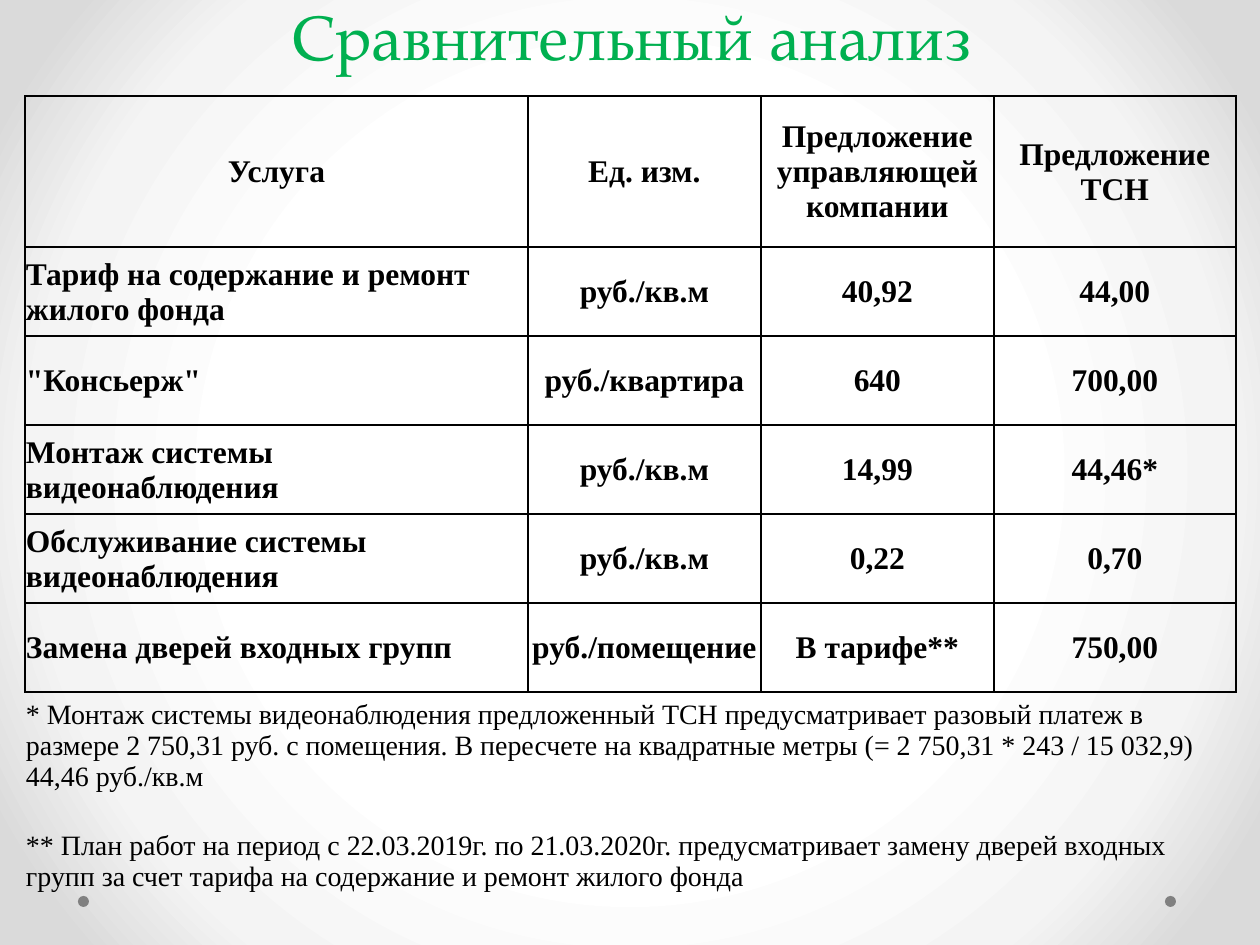
from lxml import etree
from pptx import Presentation, util as u
from pptx.dml.color import RGBColor
from pptx.enum import shapes, text
from pptx.oxml import parse_xml
from pptx.oxml.ns import nsdecls, qn

SCALE = 914400 / 126  # EMU in one px
MIDDLE, BOTTOM = text.MSO_ANCHOR.MIDDLE, text.MSO_ANCHOR.BOTTOM
LEFT, CENTER = text.PP_ALIGN.LEFT, text.PP_ALIGN.CENTER
EDGES = ("L", "R", "T", "B")

COLUMNS = [503, 233, 233, 242]
ROWS = [151] + [89] * 5 + [101, 136]
OFFERS = [
    ("Услуга", "Ед. изм.", "Предложение управляющей компании", "Предложение ТСН"),
    ("Тариф на содержание и ремонт жилого фонда", "руб./кв.м", "40,92", "44,00"),
    ('"Консьерж"', "руб./квартира", "640", "700,00"),
    ("Монтаж системы видеонаблюдения", "руб./кв.м", "14,99", "44,46*"),
    ("Обслуживание системы видеонаблюдения", "руб./кв.м", "0,22", "0,70"),
    ("Замена дверей входных групп", "руб./помещение", "В тарифе**", "750,00"),
]
NOTES = [
    ("* Монтаж системы видеонаблюдения предложенный ТСН предусматривает разовый "
     "платеж в размере 2 750,31 руб. с помещения. В пересчете на квадратные метры "
     "(= 2 750,31 * 243 / 15 032,9) 44,46 руб./кв.м", BOTTOM, "T"),
    ("** План работ на период с 22.03.2019г. по 21.03.2020г. предусматривает замену "
     "дверей входных групп за счет тарифа на содержание и ремонт жилого фонда", MIDDLE, ""),
]


def px(length):
    return u.Emu(round(length * SCALE))


def color(value):
    return RGBColor.from_string(value)


class Board:
    title = {"name": "TeX Gyre Pagella", "size": u.Pt(36), "bold": False, "ink": "00B050"}
    body = {"name": "Times New Roman", "size": u.Pt(18), "bold": True, "ink": "000000"}
    note = {**body, "size": u.Pt(16), "bold": False}

    def __init__(self, deck):
        self.page = deck.slides.add_slide(deck.slide_layouts[6])

    def backdrop(self, stops):
        """Fill the page with a round gradient, from the centre outwards."""
        self.page.background.fill.solid()
        solid = next(self.page.element.iter(qn("a:solidFill")))
        marks = "".join(f'<a:gs pos="{at * 1000}"><a:srgbClr val="{ink}"/></a:gs>'
                        for at, ink in stops)
        solid.getparent().replace(solid, parse_xml(
            f'<a:gradFill {nsdecls("a")} rotWithShape="1"><a:gsLst>{marks}</a:gsLst>'
            '<a:path path="circle"><a:fillToRect l="50000" t="50000" r="50000" b="50000"/>'
            "</a:path></a:gradFill>"))

    def dot(self, left, top, size, ink):
        shape = self.page.shapes.add_shape(
            shapes.MSO_SHAPE.OVAL, px(left), px(top), px(size), px(size))
        shape.shadow.inherit = False
        shape.fill.solid()
        shape.fill.fore_color.rgb = color(ink)
        shape.line.fill.background()

    def table(self, left, top, columns, rows):
        frame = self.page.shapes.add_table(
            len(rows), len(columns), px(left), px(top), px(sum(columns)), px(sum(rows)))
        grid = frame.table
        grid.first_row = grid.horz_banding = False
        for column, width in zip(grid.columns, columns):
            column.width = px(width)
        for row, height in zip(grid.rows, rows):
            row.height = px(height)
        return grid

    def cell(self, cell, words, style, align=CENTER, anchor=MIDDLE, inset=1, top=1):
        layout = {"vertical_anchor": anchor, "margin_left": px(inset),
                  "margin_right": px(inset), "margin_top": px(top), "margin_bottom": 0}
        for key, value in layout.items():
            setattr(cell, key, value)
        para = cell.text_frame.paragraphs[0]
        para.alignment = align
        if words:
            span = para.add_run()
            span.text = words
            for key in ("name", "size", "bold"):
                setattr(span.font, key, style[key])
            span.font.color.rgb = color(style["ink"])

    def borders(self, cell, drawn):
        """Clear the cell's fill and rule only the edges named in drawn."""
        cell.fill.background()
        properties = cell._tc.get_or_add_tcPr()
        for index, edge in enumerate(EDGES):
            line = etree.Element(qn(f"a:ln{edge}"), w=str(u.Pt(1)))
            if edge in drawn:
                paint = etree.SubElement(line, qn("a:solidFill"))
                etree.SubElement(paint, qn("a:srgbClr"), val="000000")
            else:
                etree.SubElement(line, qn("a:noFill"))
            properties.insert(index, line)


def main():
    deck = Presentation()
    deck.slide_width, deck.slide_height = px(1260), px(945)
    board = Board(deck)
    board.backdrop([(50, "FFFFFF"), (76, "F4F4F4"), (92, "DADADA")])
    for left in (1165, 78):
        board.dot(left, 896, 11, "808080")

    heading = board.table(18, 15, [1245], [33, 33])
    for row, words in enumerate(("Сравнительный анализ ", "")):
        board.cell(heading.cell(row, 0), words, board.title, inset=9, top=0)
        board.borders(heading.cell(row, 0), "")

    offers = board.table(25, 96, COLUMNS, ROWS)
    for row, record in enumerate(OFFERS):
        for column, words in enumerate(record):
            cell = offers.cell(row, column)
            align = LEFT if row and not column else CENTER
            board.cell(cell, words, board.body, align)
            board.borders(cell, EDGES)

    last = len(COLUMNS) - 1
    for row, (words, anchor, drawn) in enumerate(NOTES, len(OFFERS)):
        offers.cell(row, 0).merge(offers.cell(row, last))
        board.cell(offers.cell(row, 0), words, board.note, LEFT, anchor)
        for column in range(last + 1):
            board.borders(offers.cell(row, column), drawn)

    deck.save("out.pptx")


if __name__ == "__main__":
    main()
